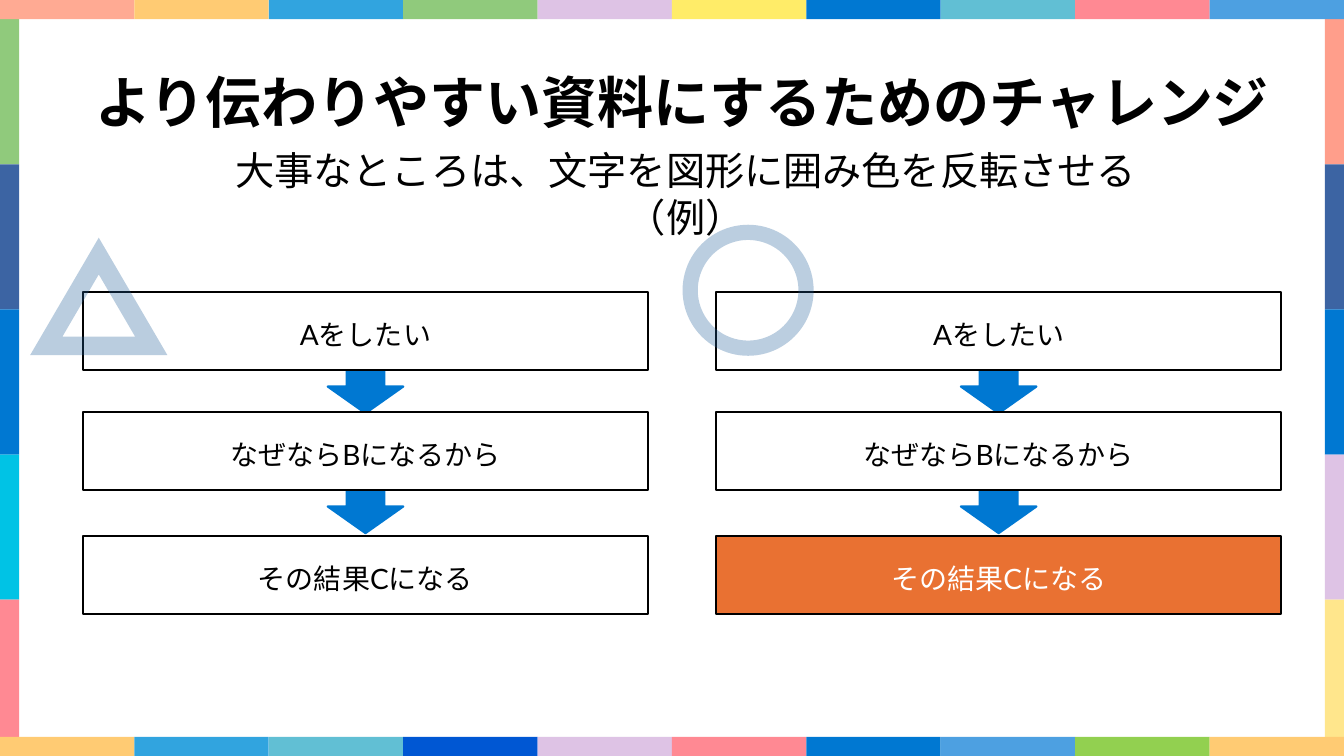
"""Build a slide showing how inverted colours stress the key point of a flow."""
import dataclasses
import typing

import lxml.etree
import pptx
import pptx.dml.color
import pptx.enum.shapes
import pptx.enum.text
import pptx.oxml.ns
import pptx.util

Inches = pptx.util.Inches
Pt = pptx.util.Pt
Preset = pptx.enum.shapes.MSO_SHAPE
Anchor = pptx.enum.text.MSO_ANCHOR

SLIDE_W, SLIDE_H = 13.33, 7.5
STRIP = 0.19
SIDE_STEP = 1.44
BOX_W, BOX_H = 5.61, 0.77
ARROW_W, ARROW_H = 0.75, 0.53
BOX_TOPS = (2.9, 4.09, 5.32)
ARROW_TOPS = (3.57, 4.76)
STEPS = ("Aをしたい", "なぜならBになるから", "その結果Cになる")

COLORS = {
    "black": "000000", "white": "FFFFFF", "accent": "E97132", "mark": "215F9A",
    "blue": "0078D2", "royal": "0057D3", "navy": "3C64A3", "sky": "31A4DF",
    "azure": "4DA0E1", "cyan": "00C3E5", "teal": "61BFD4", "green": "90CA7C",
    "lime": "92D050", "lilac": "DEC3E5", "yellow": "FFEC68", "cream": "FFE68C",
    "orange": "FFCB73", "rose": "FF8993", "coral": "FF9E8B", "peach": "FFAA93",
}
TOP = "peach orange sky green lilac yellow blue teal rose azure".split()
BOTTOM = "orange sky teal royal lilac rose blue azure lime orange".split()
LEFT = "green navy blue cyan rose".split()
RIGHT = "coral navy blue lilac cream".split()

PADDED_FRAME = {
    "word_wrap": True, "auto_size": pptx.enum.text.MSO_AUTO_SIZE.NONE,
    "vertical_anchor": Anchor.MIDDLE,
    "margin_left": Inches(0.1), "margin_right": Inches(0.1),
    "margin_top": Inches(0.12), "margin_bottom": Inches(0.05),
}
TITLE_FRAME = PADDED_FRAME | {"vertical_anchor": Anchor.TOP, "margin_top": Inches(0.05)}
TITLE_FONT = {"size": Pt(40), "bold": True, "name": "Noto Sans CJK JP"}
LEAD_FONT = {"size": Pt(28), "bold": False, "name": "Lato"}
STEP_FONT = LEAD_FONT | {"size": Pt(20)}


@dataclasses.dataclass(frozen=True)
class Block:
    """A preset shape with its place in inches and its colours."""
    preset: typing.Any
    left: float
    top: float
    width: float
    height: float
    fill: str | None = None
    line: str | None = None
    line_width: float = 1.5


@dataclasses.dataclass(frozen=True)
class Flow:
    """A column of steps whose last box has its own colours."""
    left: float
    result_fill: str
    result_text: str


FLOWS = (Flow(0.82, "white", "black"), Flow(7.1, "accent", "white"))


def rgb(name: str) -> pptx.dml.color.RGBColor:
    """Return the named colour."""
    return pptx.dml.color.RGBColor.from_string(COLORS[name])


def apply(target: typing.Any, values: dict[str, typing.Any]) -> None:
    """Set every format value on the target."""
    for key, value in values.items():
        setattr(target, key, value)


def draw(slide: typing.Any, block: Block) -> typing.Any:
    """Add one block to the slide."""
    place = (block.left, block.top, block.width, block.height)
    shape = slide.shapes.add_shape(block.preset, *map(Inches, place))
    shape.shadow.inherit = False
    if block.fill:
        shape.fill.solid()
        shape.fill.fore_color.rgb = rgb(block.fill)
    else:
        shape.fill.background()
    if block.line:
        shape.line.color.rgb = rgb(block.line)
        shape.line.width = Pt(block.line_width)
    else:
        shape.line.fill.background()
    return shape


def write(shape: typing.Any, text: str, frame: dict, font: dict, color: str) -> None:
    """Write centred text in a shape."""
    apply(shape.text_frame, frame)
    paragraph = shape.text_frame.paragraphs[0]
    paragraph.alignment = pptx.enum.text.PP_ALIGN.CENTER
    paragraph.space_before = Pt(0)
    run = paragraph.add_run()
    run.text = text
    apply(run.font, font)
    run.font.color.rgb = rgb(color)
    east_asian = lxml.etree.SubElement(run.font._element, pptx.oxml.ns.qn("a:ea"))
    east_asian.set("typeface", "Noto Sans CJK JP")


def fade(shape: typing.Any, percent: int) -> None:
    """Make the colour of a shape partly transparent."""
    for color in shape._element.spPr.iter(pptx.oxml.ns.qn("a:srgbClr")):
        alpha = lxml.etree.SubElement(color, pptx.oxml.ns.qn("a:alpha"))
        alpha.set("val", str(percent * 1000))


def draw_border(slide: typing.Any) -> None:
    """Draw the coloured strips along the four edges."""
    for left, names in ((0, LEFT), (SLIDE_W - STRIP, RIGHT)):
        for row, name in enumerate(names):
            top = STRIP + row * SIDE_STEP
            draw(slide, Block(Preset.RECTANGLE, left, top, STRIP, SIDE_STEP, name))
    for top, names in ((0, TOP), (SLIDE_H - STRIP, BOTTOM)):
        width = SLIDE_W / len(names)
        for column, name in enumerate(names):
            draw(slide, Block(Preset.RECTANGLE, column * width, top, width, STRIP, name))


def draw_flow(slide: typing.Any, flow: Flow) -> None:
    """Draw the arrows and the boxes of one column."""
    arrow_left = flow.left + (BOX_W - ARROW_W) / 2
    for top in ARROW_TOPS:
        draw(slide, Block(Preset.DOWN_ARROW, arrow_left, top, ARROW_W, ARROW_H,
                          "blue", "blue"))
    fills = ("white", "white", flow.result_fill)
    inks = ("black", "black", flow.result_text)
    for step, top, fill, ink in zip(STEPS, BOX_TOPS, fills, inks):
        box = draw(slide, Block(Preset.RECTANGLE, flow.left, top, BOX_W, BOX_H,
                                fill, "black"))
        write(box, step, PADDED_FRAME, STEP_FONT, ink)


def draw_marks(slide: typing.Any) -> None:
    """Draw the see-through circle and triangle that rate the columns."""
    circle = draw(slide, Block(Preset.DONUT, 6.77, 2.23, 1.3, 1.3, "mark"))
    circle.adjustments[0] = 0.116
    fade(circle, 30)
    triangle = draw(slide, Block(Preset.ISOSCELES_TRIANGLE, 0.46, 2.54, 1.04, 0.89,
                                 None, "mark", 13.25))
    fade(triangle, 31)
    outline = triangle.line._get_or_add_ln()
    miter = lxml.etree.SubElement(outline, pptx.oxml.ns.qn("a:miter"))
    miter.set("lim", "800000")


def main() -> None:
    """Build and save the slide."""
    deck = pptx.Presentation()
    apply(deck, {"slide_width": Inches(SLIDE_W), "slide_height": Inches(SLIDE_H)})
    slide = deck.slides.add_slide(deck.slide_layouts[0])
    title, lead = slide.shapes.title, slide.placeholders[1]
    for part, place in ((title, (0.82, 0.62, 11.89, 0.77)),
                        (lead, (1.67, 1.22, 10.26, 1.33))):
        apply(part, dict(zip(("left", "top", "width", "height"), map(Inches, place))))
    write(title, "より伝わりやすい資料にするためのチャレンジ", TITLE_FRAME, TITLE_FONT, "black")
    write(lead, "大事なところは、文字を図形に囲み色を反転させる（例）",
          PADDED_FRAME, LEAD_FONT, "black")
    draw_border(slide)
    for flow in FLOWS:
        draw_flow(slide, flow)
    draw_marks(slide)
    deck.save("out.pptx")


if __name__ == "__main__":
    main()
